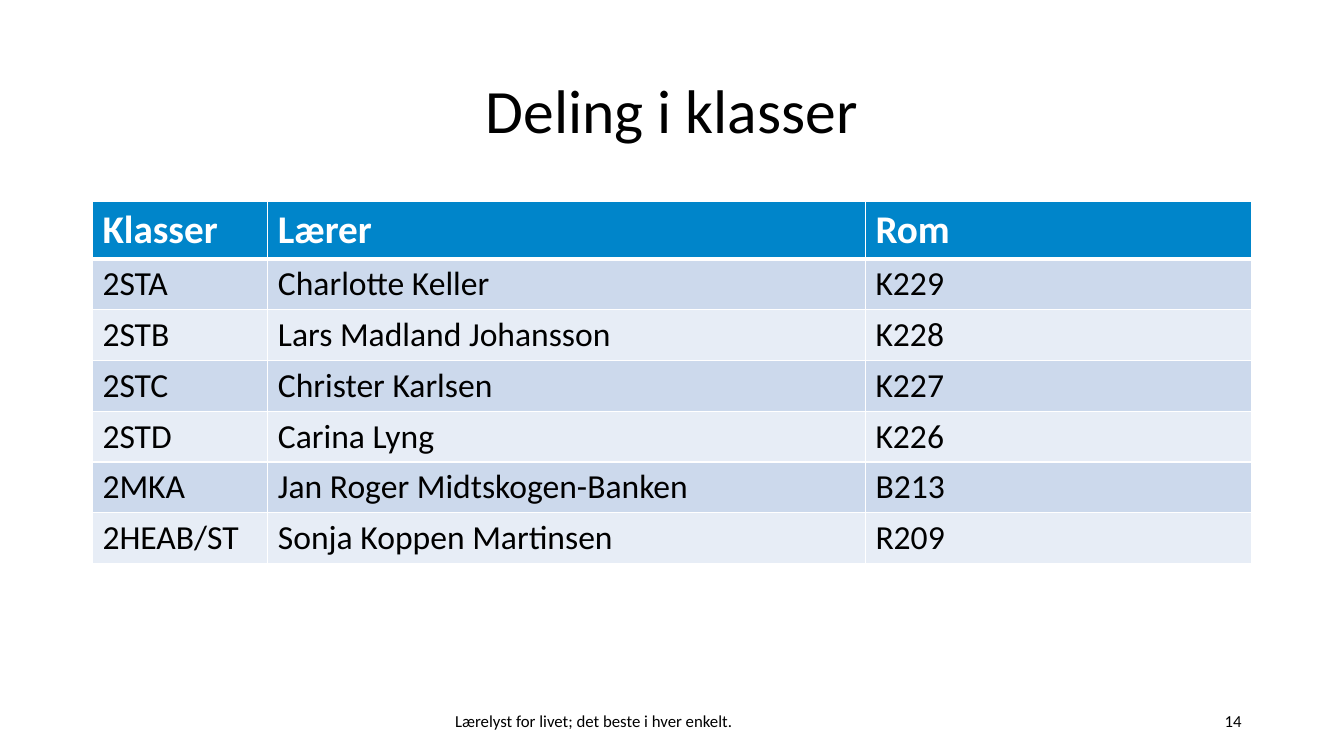
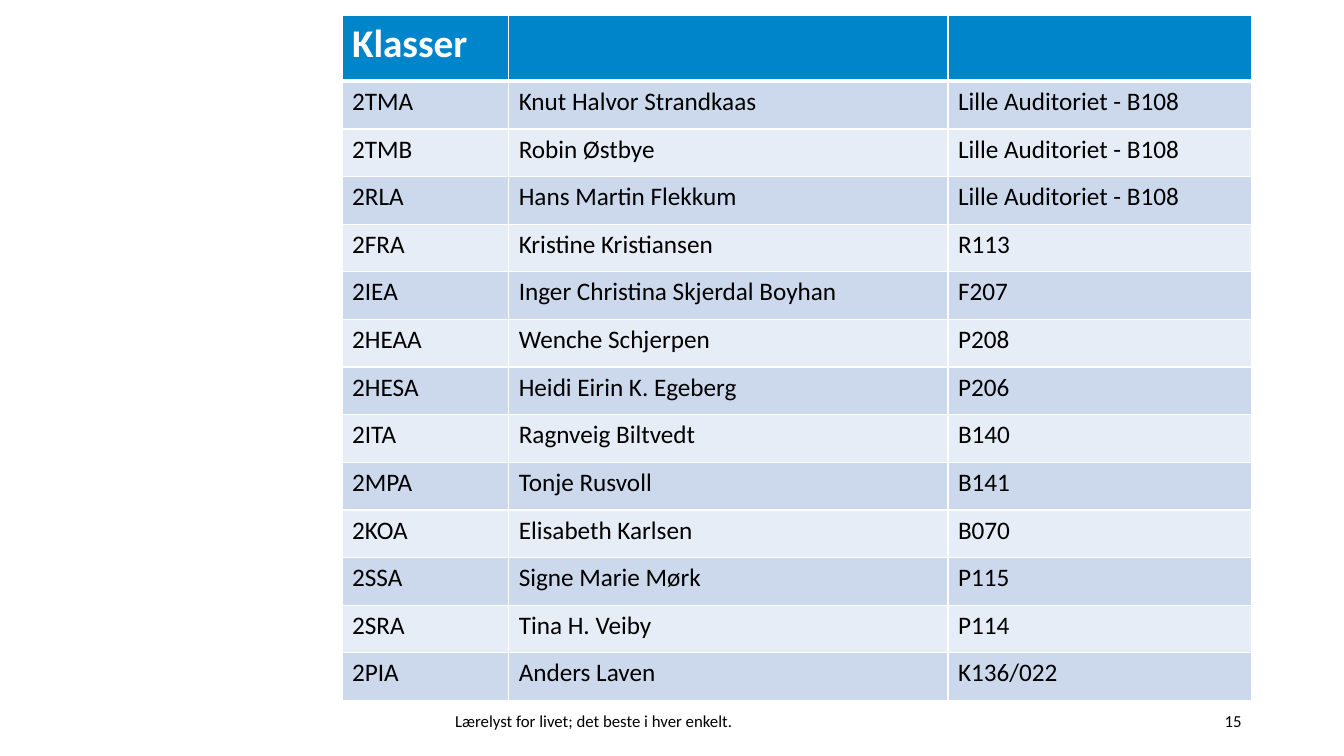
import pptx
import pptx.dml.color
import pptx.enum.text
import pptx.oxml
import pptx.oxml.ns
import pptx.util

Cm = pptx.util.Cm
Pt = pptx.util.Pt
ALIGN = pptx.enum.text.PP_ALIGN
MIDDLE = pptx.enum.text.MSO_ANCHOR.MIDDLE

COLORS = {
    "text": "000000",
    "white": "FFFFFF",
    "header": "0085CA",
    "band_dark": "CCD9EC",
    "band_light": "E7EDF6",
}
FONT = "Calibri"
FOOTER = "Lærelyst for livet; det beste i hver enkelt."
TITLE_ONLY, BLANK = 5, 6


def rgb(name):
    return pptx.dml.color.RGBColor.from_string(COLORS[name])


class Deck:
    """Holds the style and the current slide."""

    def __init__(self):
        self.prs = pptx.Presentation()
        self.prs.slide_width = Cm(33.87)
        self.prs.slide_height = Cm(19.05)
        self.s = None

    def slide(self, number, title=None):
        layout = BLANK if title is None else TITLE_ONLY
        self.s = self.prs.slides.add_slide(self.prs.slide_layouts[layout])
        if title is not None:
            self.title(title)
        self.text(FOOTER, 11.22, 11.43, ALIGN.LEFT)
        self.text(str(number), 23.92, 7.62, ALIGN.RIGHT)

    def style(self, p, size, color="text", bold=False):
        for r in p.runs:
            r.font.name = FONT
            r.font.size = Pt(size)
            r.font.bold = bold
            r.font.color.rgb = rgb(color)

    def title(self, text):
        sp = self.s.shapes.title
        sp.left, sp.top, sp.width, sp.height = Cm(2.33), Cm(1.01), Cm(29.21), Cm(3.68)
        tf = sp.text_frame
        tf.text = text
        tf.vertical_anchor = MIDDLE
        p = tf.paragraphs[0]
        p.alignment = ALIGN.CENTER
        p.line_spacing = 0.9
        self.style(p, 44)

    def text(self, text, left, width, align):
        """Adds a text box on the footer line."""
        sp = self.s.shapes.add_textbox(Cm(left), Cm(17.66), Cm(width), Cm(1.01))
        tf = sp.text_frame
        tf.word_wrap = True
        tf.vertical_anchor = MIDDLE
        tf.text = text
        p = tf.paragraphs[0]
        p.alignment = align
        self.style(p, 12)

    def borders(self, cell, **widths):
        """Draws white cell borders; widths in points by side (L, R, T, B)."""
        tc_pr = cell._tc.get_or_add_tcPr()
        for side in "LRTB":
            tc_pr.append(pptx.oxml.parse_xml(
                f'<a:ln{side} {pptx.oxml.ns.nsdecls("a")} w="{Pt(widths.get(side, 1))}">'
                f'<a:solidFill><a:srgbClr val="{COLORS["white"]}"/></a:solidFill>'
                f'</a:ln{side}>'))

    def table(self, rows, left, top, widths, header_height, row_height, size):
        heights = [header_height] + [row_height] * (len(rows) - 1)
        table = self.s.shapes.add_table(
            len(rows), len(widths), Cm(left), Cm(top),
            Cm(sum(widths)), Cm(sum(heights))).table
        for column, width in zip(table.columns, widths):
            column.width = Cm(width)
        for i, (values, height) in enumerate(zip(rows, heights)):
            table.rows[i].height = Cm(height)
            for j, value in enumerate(values):
                cell = table.cell(i, j)
                cell.text = value
                p = cell.text_frame.paragraphs[0]
                if i == 0:
                    fill = "header"
                    self.style(p, 28, "white", True)
                    self.borders(cell, B=3)
                else:
                    fill = "band_dark" if i % 2 else "band_light"
                    self.style(p, size)
                    self.borders(cell, T=3 if i == 1 else 1)
                cell.fill.solid()
                cell.fill.fore_color.rgb = rgb(fill)


def main():
    deck = Deck()

    # Classes with a title
    deck.slide(14, "Deling i klasser")
    deck.table([
        ("Klasser", "Lærer", "Rom"),
        ("2STA", "Charlotte Keller", "K229"),
        ("2STB", "Lars Madland Johansson", "K228"),
        ("2STC", "Christer Karlsen", "K227"),
        ("2STD", "Carina Lyng", "K226"),
        ("2MKA", "Jan Roger Midtskogen-Banken", "B213"),
        ("2HEAB/ST", "Sonja Koppen Martinsen", "R209"),
    ], 2.33, 5.08, (4.42, 15.06, 9.73), 1.4, 1.28, 24)

    # Remaining classes
    deck.slide(15)
    deck.table([
        ("Klasser", "", ""),
        ("2TMA", "Knut Halvor Strandkaas", "Lille Auditoriet - B108"),
        ("2TMB", "Robin Østbye", "Lille Auditoriet - B108"),
        ("2RLA", "Hans Martin Flekkum", "Lille Auditoriet - B108"),
        ("2FRA", "Kristine Kristiansen", "R113"),
        ("2IEA", "Inger Christina Skjerdal Boyhan", "F207"),
        ("2HEAA", "Wenche Schjerpen", "P208"),
        ("2HESA", "Heidi Eirin K. Egeberg", "P206"),
        ("2ITA", "Ragnveig Biltvedt", "B140"),
        ("2MPA", "Tonje Rusvoll", "B141"),
        ("2KOA", "Elisabeth Karlsen", "B070"),
        ("2SSA", "Signe Marie Mørk", "P115"),
        ("2SRA", "Tina H. Veiby", "P114"),
        ("2PIA", "Anders Laven", "K136/022"),
    ], 8.62, 0.38, (4.2, 11.07, 7.64), 1.67, 1.2, 18)

    deck.prs.save("out.pptx")


if __name__ == "__main__":
    main()
